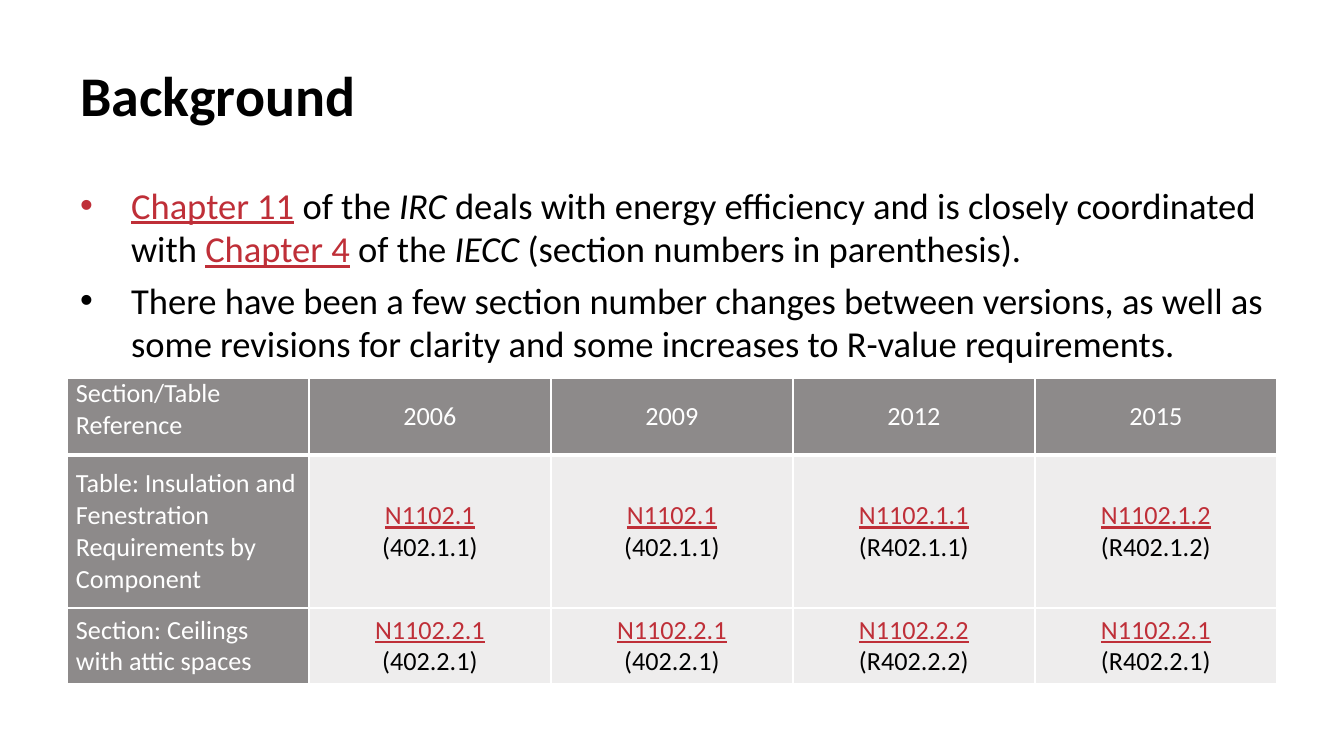
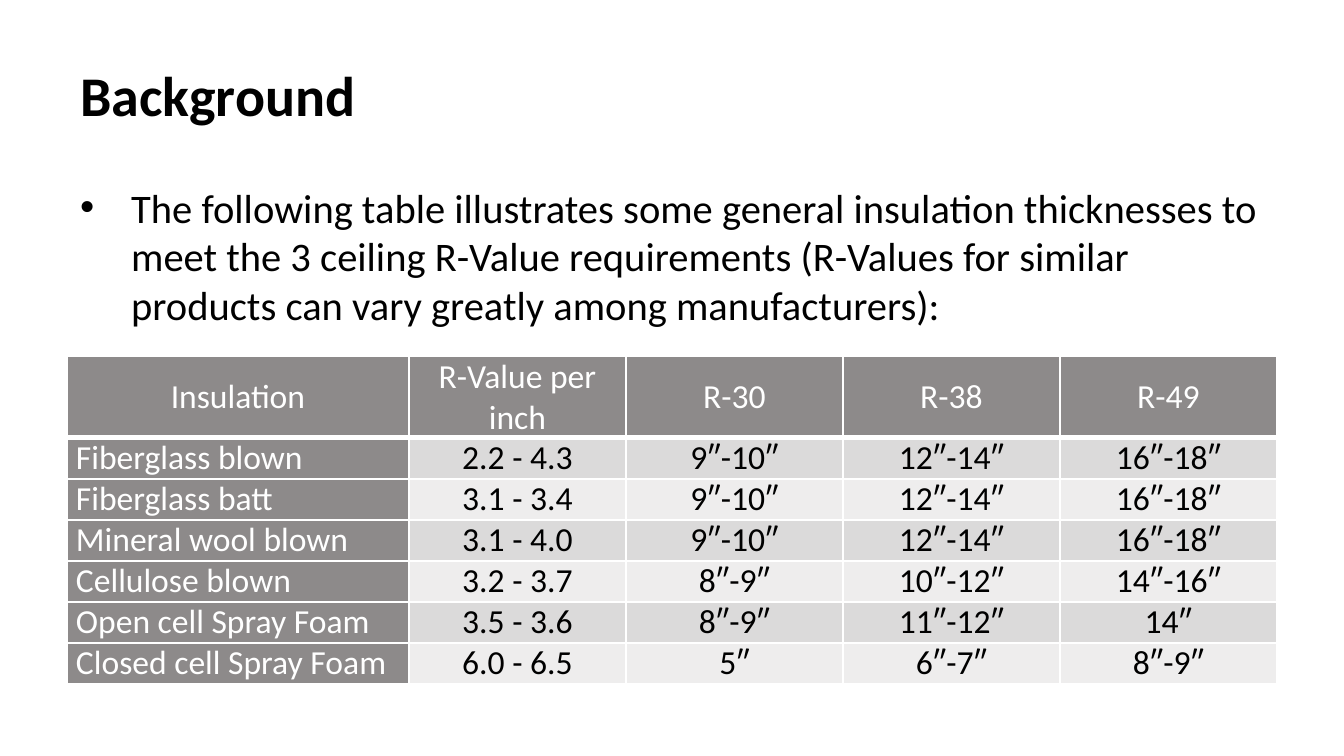
from dataclasses import dataclass

import pptx
import pptx.dml.color
import pptx.enum.text
import pptx.oxml
import pptx.oxml.ns
import pptx.util

PX = 914400 / 134.4
ALIGN = pptx.enum.text.PP_ALIGN
ANCHOR = pptx.enum.text.MSO_ANCHOR


@dataclass(frozen=True)
class Theme:
    font: str = "Calibri"
    ink: str = "000000"
    paper: str = "FFFFFF"
    link: str = "BF2F38"
    heading: str = "8D8A8A"
    band_dark: str = "DBDADA"
    band_light: str = "EEEDED"
    title_size: float = 30
    reference_size: float = 14
    thickness_size: float = 18
    rule: float = 1
    heading_rule: float = 3


THEME = Theme()


@dataclass(frozen=True)
class Piece:
    """A stretch of text with its own emphasis."""
    text: str
    link: bool = False
    italic: bool = False


def px(length):
    return pptx.util.Emu(round(length * PX))


def rgb(value):
    return pptx.dml.color.RGBColor.from_string(value)


def xml(markup):
    """Parse one drawing element; the a: prefix is declared here."""
    head, mark, rest = markup.partition(">")
    slash = "/" if head.endswith("/") else ""
    return pptx.oxml.parse_xml(
        f"{head.rstrip('/')} {pptx.oxml.ns.nsdecls('a')}{slash}{mark}{rest}")


def link(text):
    return Piece(text, link=True)


def italic(text):
    return Piece(text, italic=True)


def write(paragraph, pieces, size, color=THEME.ink, bold=False):
    font = paragraph.font
    font.name, font.size, font.bold = THEME.font, pptx.util.Pt(size), bold
    font.color.rgb = rgb(color)
    for piece in pieces:
        run = paragraph.add_run()
        run.text = piece.text
        if piece.link:
            run.font.underline = True
            run.font.color.rgb = rgb(THEME.link)
        if piece.italic:
            run.font.italic = True


def add_text_frame(slide, box):
    frame = slide.shapes.add_textbox(*map(px, box)).text_frame
    frame.word_wrap = True
    return frame


def add_title(slide, box, text):
    frame = add_text_frame(slide, box)
    frame.vertical_anchor = ANCHOR.MIDDLE
    write(frame.paragraphs[0], [Piece(text)], THEME.title_size, bold=True)


def add_bullets(slide, box, bullets, size):
    """Each bullet is a list of pieces; its mark takes the first piece's colour."""
    frame = add_text_frame(slide, box)
    for index, pieces in enumerate(bullets):
        paragraph = frame.add_paragraph() if index else frame.paragraphs[0]
        properties = paragraph._p.get_or_add_pPr()
        properties.set("marL", str(px(51)))
        properties.set("indent", str(px(-51)))
        mark = THEME.link if pieces[0].link else THEME.ink
        properties.append(xml(f'<a:buClr><a:srgbClr val="{mark}"/></a:buClr>'))
        properties.append(xml('<a:buFont typeface="Arial"/>'))
        properties.append(xml('<a:buChar char="•"/>'))
        if index:
            paragraph.space_before = pptx.util.Pt(round(size * 0.2, 1))
        write(paragraph, pieces, size)


def add_borders(cell, bottom):
    widths = {"L": THEME.rule, "R": THEME.rule, "T": THEME.rule, "B": bottom}
    for side, width in widths.items():
        cell._tc.get_or_add_tcPr().append(xml(
            f'<a:ln{side} w="{pptx.util.Pt(width)}"><a:solidFill>'
            f'<a:srgbClr val="{THEME.paper}"/></a:solidFill></a:ln{side}>'))


def fill_cell(cell, lines, size, color, fill, align, bottom):
    add_borders(cell, bottom)
    cell.fill.solid()
    cell.fill.fore_color.rgb = rgb(fill)
    cell.margin_left = cell.margin_right = px(9)
    cell.margin_top = cell.margin_bottom = 0
    cell.vertical_anchor = ANCHOR.MIDDLE
    for index, piece in enumerate(lines):
        frame = cell.text_frame
        paragraph = frame.add_paragraph() if index else frame.paragraphs[0]
        paragraph.alignment = align
        write(paragraph, [piece], size, color)


def add_grid(slide, left, top, widths, heights, rows, size, bands, corner_align):
    """Table with a heading row and column; each cell is a list of one-line pieces."""
    table = slide.shapes.add_table(
        len(rows), len(widths), px(left), px(top),
        px(sum(widths)), px(sum(heights))).table
    table.first_row = table.horz_banding = False
    for column, width in zip(table.columns, widths):
        column.width = px(width)
    for row, height in zip(table.rows, heights):
        row.height = px(height)
    for r, row in enumerate(rows):
        for c, lines in enumerate(row):
            is_heading = r == 0 or c == 0
            align = ALIGN.CENTER if c else ALIGN.LEFT
            if r == c == 0:
                align = corner_align
            fill_cell(
                table.cell(r, c), lines, size,
                THEME.paper if is_heading else THEME.ink,
                THEME.heading if is_heading else bands[(r - 1) % len(bands)],
                align, THEME.rule if r else THEME.heading_rule)
    return table


def add_background_slide(deck, bullets, size, body_height):
    slide = deck.slides.add_slide(deck.slide_layouts[6])
    add_title(slide, (67, 31, 1210, 126), "Background")
    add_bullets(slide, (67, 176, 1210, body_height), bullets, size)
    return slide


def add_code_sections(deck):
    slide = add_background_slide(deck, [
        [link("Chapter 11"), Piece(" of the "), italic("IRC"),
         Piece(" deals with energy efficiency and is closely coordinated with "),
         link("Chapter 4"), Piece(" of the "), italic("IECC "),
         Piece("(section numbers in parenthesis).")],
        [Piece("There have been a few section number changes between versions, "
               "as well as some revisions for clarity and some increases to "
               "R-value requirements.")],
    ], 19.6, 202)
    editions = ["Section/Table Reference", "2006", "2009", "2012", "2015"]
    references = {
        "Table: Insulation and Fenestration Requirements by Component": [
            ("N1102.1", "(402.1.1)"), ("N1102.1", "(402.1.1)"),
            ("N1102.1.1", "(R402.1.1)"), ("N1102.1.2", "(R402.1.2)")],
        "Section: Ceilings with attic spaces": [
            ("N1102.2.1", "(402.2.1)"), ("N1102.2.1", "(402.2.1)"),
            ("N1102.2.2", "(R402.2.2)"), ("N1102.2.1", "(R402.2.1)")],
    }
    rows = [[[Piece(edition)] for edition in editions]]
    for topic, sections in references.items():
        rows.append([[Piece(topic)]] + [[link(irc), Piece(iecc)] for irc, iecc in sections])
    table = add_grid(slide, 67, 378, [242] * 5, [77, 153, 76], rows,
                     THEME.reference_size, [THEME.band_light], ALIGN.LEFT)
    table.cell(0, 0).vertical_anchor = ANCHOR.TOP


def add_thicknesses(deck):
    slide = add_background_slide(deck, [
        [Piece("The following table illustrates some general insulation "
               "thicknesses to meet the 3 ceiling R-Value requirements (R-Values "
               "for similar products can vary greatly among manufacturers):")],
    ], 21.7, 157)
    thicknesses = [
        ("Insulation", "R-Value per inch", "R-30", "R-38", "R-49"),
        ("Fiberglass blown", "2.2 - 4.3", "9″-10″", "12″-14″", "16″-18″"),
        ("Fiberglass batt", "3.1 - 3.4", "9″-10″", "12″-14″", "16″-18″"),
        ("Mineral wool blown", "3.1 - 4.0", "9″-10″", "12″-14″", "16″-18″"),
        ("Cellulose blown", "3.2 - 3.7", "8″-9″", "10″-12″", "14″-16″"),
        ("Open cell Spray Foam", "3.5 - 3.6", "8″-9″", "11″-12″", "14″"),
        ("Closed cell Spray Foam", "6.0 - 6.5", "5″", "6″-7″", "8″-9″"),
    ]
    rows = [[[Piece(text)] for text in row] for row in thicknesses]
    add_grid(slide, 67, 356, [342] + [217] * 4, [82] + [41] * 6, rows,
             THEME.thickness_size, [THEME.band_dark, THEME.band_light], ALIGN.CENTER)


def main():
    deck = pptx.Presentation()
    deck.slide_width, deck.slide_height = px(1344), px(756)
    add_code_sections(deck)
    add_thicknesses(deck)
    deck.save("out.pptx")


if __name__ == "__main__":
    main()
